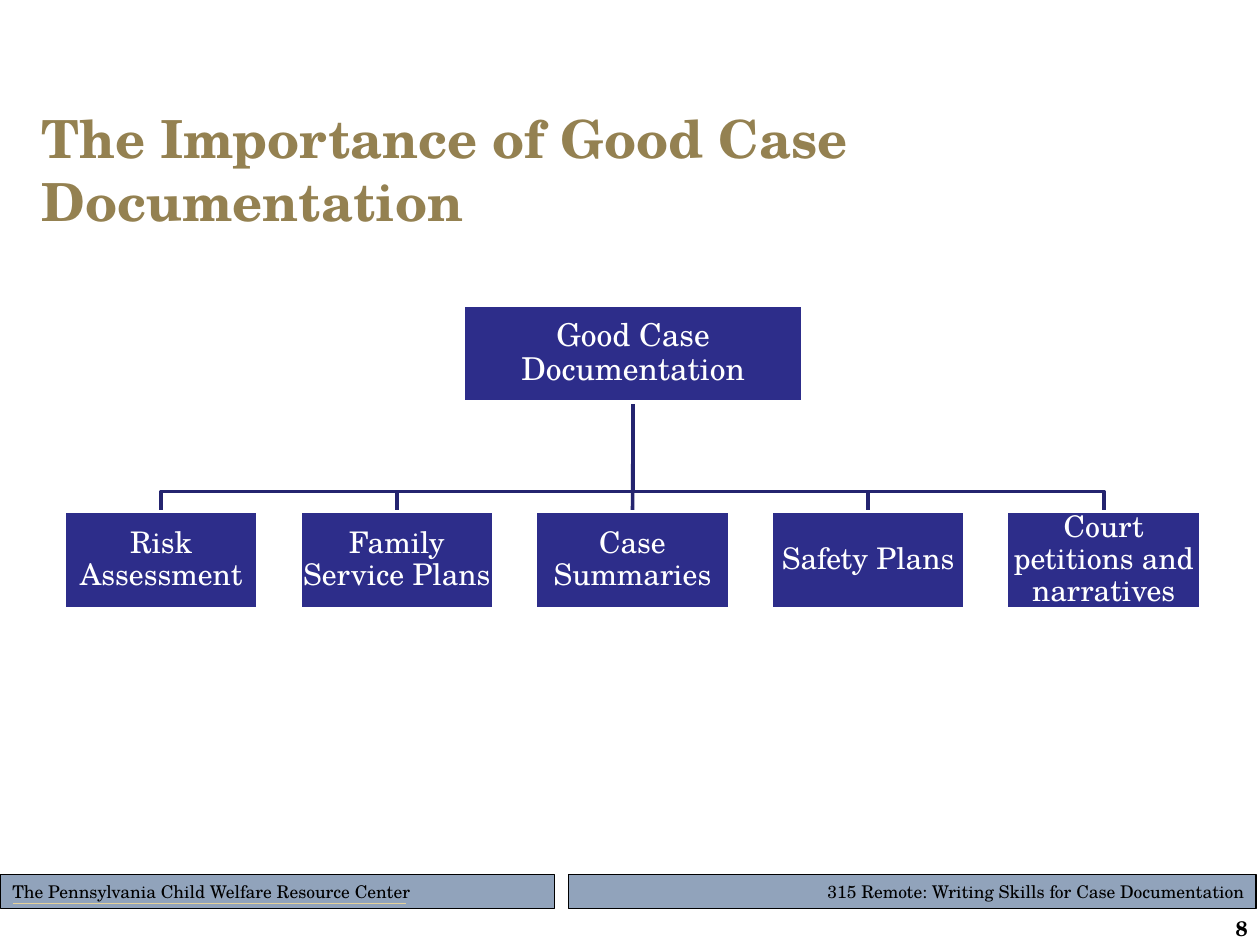
from lxml.etree import SubElement
from pptx import Presentation
from pptx.dml.color import RGBColor
from pptx.enum.shapes import MSO_CONNECTOR, MSO_SHAPE
from pptx.enum.text import MSO_ANCHOR, PP_ALIGN
from pptx.oxml.ns import qn
from pptx.util import Inches, Pt

COLORS = {"navy": "2D2D8A", "link": "24246F", "white": "FFFFFF", "black": "000000",
          "bar": "91A3BB", "gold": "948151", "sand": "E5D199"}
BOTTOM, TOP = 2, 0
BOX_H = 0.77
ROOT_X, ROOT_Y, ROOT_W = 3.68, 2.42, 2.69
LEAF_X, LEAF_Y, LEAF_W, LEAF_STEP = 0.51, 4.06, 1.54, 1.87
BEND_Y = 3.9
LEAVES = ["Risk Assessment", "Family Service Plans", "Case Summaries",
          "Safety Plans", "Court petitions and narratives"]


def rgb(name):
    return RGBColor.from_string(COLORS[name])


def assign(target, values):
    for key, value in values.items():
        setattr(target, key, value)


class Deck:
    """Holds the shared style and the slide being built."""
    font = "TeX Gyre Schola"

    def __init__(self, slide):
        self.slide = slide
        self.shapes = slide.shapes

    def label(self, shape, text, size, color, align=PP_ALIGN.LEFT,
              anchor=MSO_ANCHOR.MIDDLE, bold=False, inset=None, spacing=None):
        frame = shape.text_frame
        assign(frame, {"word_wrap": True, "vertical_anchor": anchor})
        if inset is not None:
            sides = ("left", "top", "right", "bottom")
            assign(frame, {f"margin_{side}": Inches(inset) for side in sides})
        para = frame.paragraphs[0]
        assign(para, {"text": text, "alignment": align, "line_spacing": spacing})
        font = para.runs[0].font
        assign(font, {"name": self.font, "size": Pt(size), "bold": bold})
        font.color.rgb = rgb(color)

    def text(self, place, text, size, color, **style):
        box = self.shapes.add_textbox(*map(Inches, place))
        self.label(box, text, size, color, **style)

    def box(self, place, fill, line, width, text, size, color, **style):
        box = self.shapes.add_shape(MSO_SHAPE.RECTANGLE, *map(Inches, place))
        box.shadow.inherit = False
        box.fill.solid()
        box.fill.fore_color.rgb = rgb(fill)
        self.stroke(box, line, width)
        self.label(box, text, size, color, **style)
        return box

    def stroke(self, shape, color, width):
        shape.line.color.rgb = rgb(color)
        shape.line.width = Pt(width)

    def line(self, start, end, color, width):
        line = self.shapes.add_connector(
            MSO_CONNECTOR.STRAIGHT, *map(Inches, (*start, *end)))
        self.stroke(line, color, width)
        SubElement(line._element.spPr, qn("a:effectLst"))
        return line

    def bend(self, points, color, width):
        start, *rest = [tuple(map(Inches, point)) for point in points]
        route = self.shapes.build_freeform(*start)
        route.add_line_segments(rest, close=False)
        bend = route.convert_to_shape()
        bend.shadow.inherit = False
        bend.fill.background()
        self.stroke(bend, color, width)
        return bend

    def node(self, place, text, size):
        return self.box(place, "navy", "white", 2, text, size, "white",
                        align=PP_ALIGN.CENTER, inset=0.01, spacing=0.9)

    def under(self, shape, base):
        """Moves shape behind base."""
        base._element.addprevious(shape._element)


def chart(deck):
    root = deck.node((ROOT_X, ROOT_Y, ROOT_W, BOX_H), "Good Case Documentation", 18)
    hub, base = ROOT_X + ROOT_W / 2, ROOT_Y + BOX_H
    for i, name in enumerate(LEAVES):
        left = LEAF_X + i * LEAF_STEP
        leaf = deck.node((left, LEAF_Y, LEAF_W, BOX_H), name, 17)
        mid = left + LEAF_W / 2
        if i == len(LEAVES) // 2:
            link = deck.line((hub, base), (mid, LEAF_Y), "link", 2)
            link.begin_connect(root, BOTTOM)
            link.end_connect(leaf, TOP)
        else:
            link = deck.bend([(hub, base), (hub, BEND_Y), (mid, BEND_Y),
                              (mid, LEAF_Y)], "link", 2)
        deck.under(link, root)


def main():
    show = Presentation()
    assign(show, {"slide_width": Inches(10), "slide_height": Inches(7.5)})
    deck = Deck(show.slides.add_slide(show.slide_layouts[6]))
    deck.box((4.51, 6.94, 5.46, 0.27), "bar", "black", 0.75,
             "315 Remote: Writing Skills for Case Documentation", 10, "black",
             align=PP_ALIGN.RIGHT)
    deck.box((0, 6.94, 4.4, 0.27), "bar", "black", 0.5,
             "The Pennsylvania Child Welfare Resource Center", 10, "black")
    deck.line((0.1, 7.17), (3.22, 7.17), "sand", 0.75)
    deck.text((0.23, 1.02, 9.69, 0.65), "The Importance of Good Case Documentation",
              30, "gold", bold=True)
    deck.text((8.89, 7.22, 1.11, 0.26), "8", 12, "black", bold=True,
              align=PP_ALIGN.RIGHT, anchor=MSO_ANCHOR.TOP)
    chart(deck)
    show.save("out.pptx")


if __name__ == "__main__":
    main()
